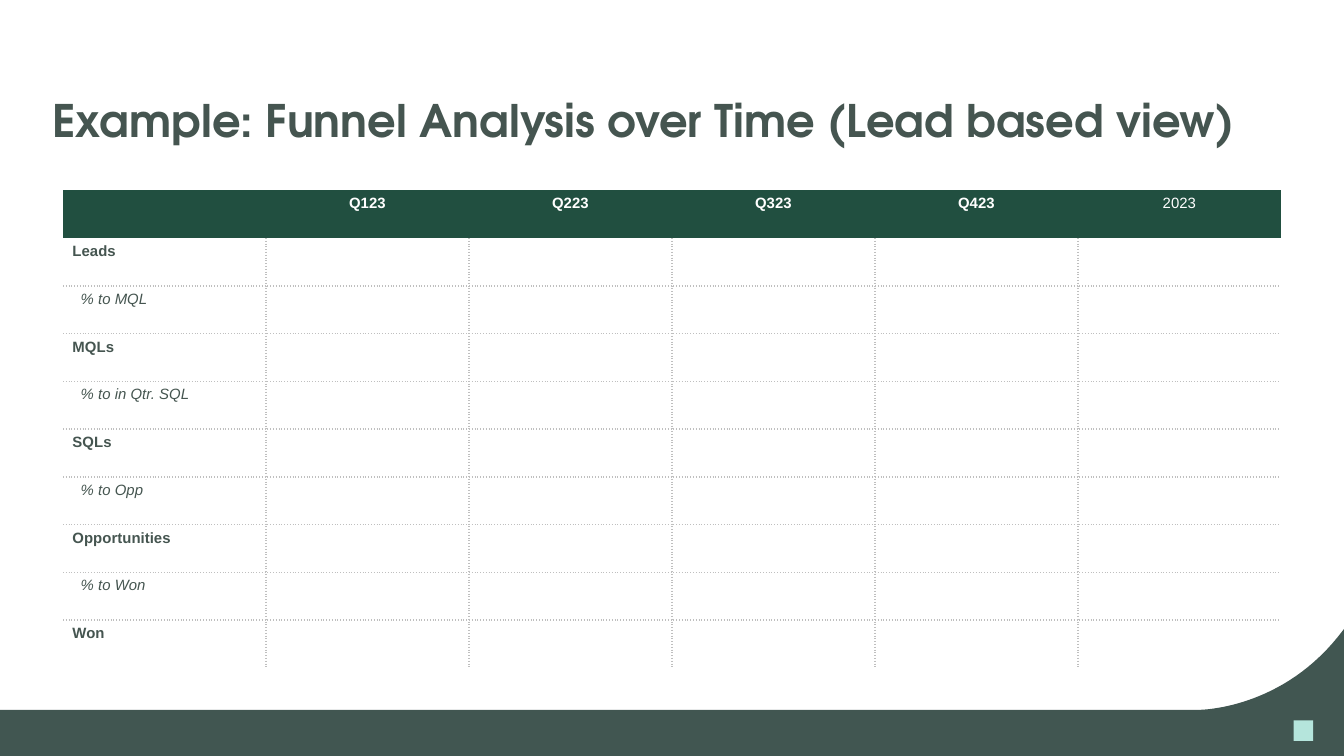
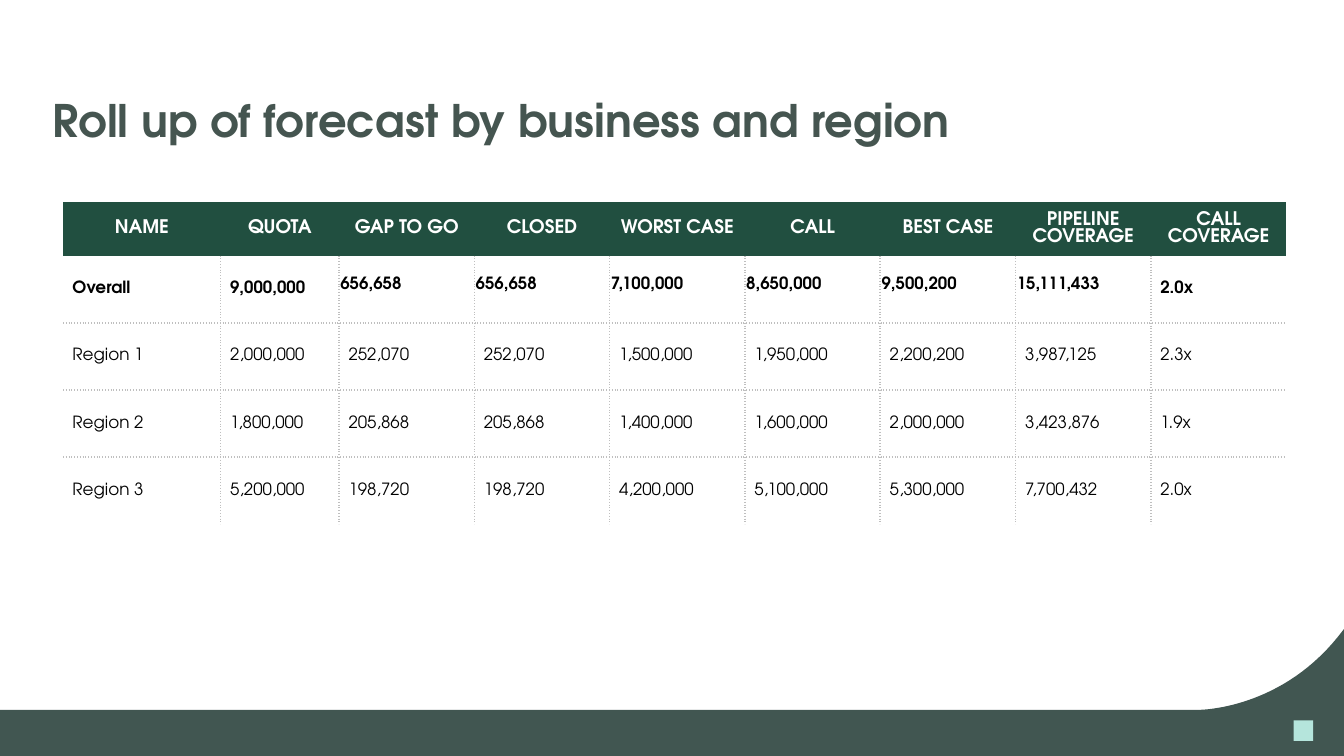
from dataclasses import dataclass

from lxml.etree import SubElement
from pptx import Presentation
from pptx.dml.color import RGBColor
from pptx.enum.shapes import MSO_SHAPE
from pptx.enum.text import MSO_ANCHOR, PP_ALIGN
from pptx.oxml.ns import qn
from pptx.util import Pt

COLORS = {
    "title": "455550",
    "band": "415651",
    "mark": "B5E5DC",
    "header": "214F40",
    "white": "FFFFFF",
    "black": "000000",
    "border": "BFBFBF",
}
SANS = "Arial"
DISPLAY = "TeX Gyre Adventor"
PLAIN_TABLE = "{2D5ABB26-0587-4C30-8999-92F81FD0307C}"
TABLE_LEFT = 33.75
TIGHT_INSETS = (0.7, 0.7, 0.7, 5.1)


@dataclass(frozen=True)
class CellStyle:
    font: str
    size: float
    color: str
    insets: tuple[float, float, float, float]
    fill: str | None = None
    bold: bool = False
    italic: bool = False
    align: PP_ALIGN = PP_ALIGN.LEFT
    anchor: MSO_ANCHOR = MSO_ANCHOR.TOP
    indent: float = 0
    line_spacing: float | None = None


@dataclass(frozen=True)
class Cell:
    text: str
    style: CellStyle


@dataclass(frozen=True)
class Grid:
    top: float
    widths: list[float]
    heights: list[float]
    rows: list[list[Cell]]


def rgb(name: str) -> RGBColor:
    return RGBColor.from_string(COLORS[name])


def write_text(frame, text: str, *, font: str, size: float, color: str, bold: bool = False,
               italic: bool = False, align: PP_ALIGN = PP_ALIGN.LEFT, indent: float = 0,
               line_spacing=None) -> None:
    para = frame.paragraphs[0]
    para.alignment = align
    if line_spacing:
        para.line_spacing = line_spacing
    if indent:
        para._p.get_or_add_pPr().set("marL", str(Pt(indent)))
    if not text:
        SubElement(para._p, qn("a:endParaRPr"), sz=str(int(size * 100)))
        return
    span = para.add_run()
    span.text = text
    span.font.name = font
    span.font.size = Pt(size)
    span.font.bold = bold
    span.font.italic = italic
    span.font.color.rgb = rgb(color)


def paint(shape, color: str) -> None:
    shape.shadow.inherit = False
    shape.fill.solid()
    shape.fill.fore_color.rgb = rgb(color)
    shape.line.fill.background()


def curve_points(start, first, second, end, steps: int = 32) -> list[tuple[int, int]]:
    points = []
    for step in range(1, steps + 1):
        t = step / steps
        weights = ((1 - t) ** 3, 3 * t * (1 - t) ** 2, 3 * t ** 2 * (1 - t), t ** 3)
        x, y = (sum(w * point[axis] for w, point in zip(weights, (start, first, second, end)))
                for axis in (0, 1))
        points.append((Pt(x), Pt(y)))
    return points


def add_footer(page) -> None:
    bend = (641.5, 380.3)
    builder = page.shapes.build_freeform(Pt(720), Pt(405))
    corners = [(0, 405), (0, 380.3), bend]
    builder.add_line_segments([(Pt(x), Pt(y)) for x, y in corners], close=False)
    builder.add_line_segments(curve_points(bend, bend, (687.6, 381), (720, 337)))
    paint(builder.convert_to_shape(), "band")
    mark = page.shapes.add_shape(MSO_SHAPE.RECTANGLE, Pt(693), Pt(386), Pt(10.5), Pt(11))
    paint(mark, "mark")


def add_title(page, text: str) -> None:
    box = page.shapes.add_textbox(Pt(24.5), Pt(35.3), Pt(671), Pt(45.4))
    frame = box.text_frame
    frame.word_wrap = True
    frame.vertical_anchor = MSO_ANCHOR.BOTTOM
    frame.margin_left = frame.margin_right = Pt(3.6)
    frame.margin_top = frame.margin_bottom = Pt(1.8)
    write_text(frame, text, font=DISPLAY, size=24, color="title", bold=True, line_spacing=0.9)


def add_borders(cell, edges: dict[str, bool]) -> None:
    properties = cell._tc.get_or_add_tcPr()
    for edge, shown in edges.items():
        if shown:
            line = SubElement(properties, qn(f"a:{edge}"), w=str(Pt(1)))
            fill = SubElement(line, qn("a:solidFill"))
            SubElement(fill, qn("a:srgbClr"), val=COLORS["border"])
            SubElement(line, qn("a:prstDash"), val="dot")


def fill_cell(cell, content: Cell) -> None:
    style = content.style
    cell.margin_left, cell.margin_top, cell.margin_right, cell.margin_bottom = map(Pt, style.insets)
    cell.vertical_anchor = style.anchor
    if style.fill:
        cell.fill.solid()
        cell.fill.fore_color.rgb = rgb(style.fill)
    else:
        cell.fill.background()
    write_text(cell.text_frame, content.text, font=style.font, size=style.size, color=style.color,
               bold=style.bold, italic=style.italic, align=style.align, indent=style.indent,
               line_spacing=Pt(style.line_spacing) if style.line_spacing else None)


def add_grid(page, grid: Grid) -> None:
    last_row, last_column = len(grid.heights) - 1, len(grid.widths) - 1
    holder = page.shapes.add_table(last_row + 1, last_column + 1, Pt(TABLE_LEFT), Pt(grid.top),
                                   Pt(sum(grid.widths)), Pt(sum(grid.heights)))
    table = holder.table
    table.first_row = table.horz_banding = False
    table._tbl.tblPr.find(qn("a:tableStyleId")).text = PLAIN_TABLE
    for column, width in zip(table.columns, grid.widths):
        column.width = Pt(width)
    for row, height in zip(table.rows, grid.heights):
        row.height = Pt(height)
    for r, contents in enumerate(grid.rows):
        for c, content in enumerate(contents):
            cell = table.cell(r, c)
            if r > 0:
                add_borders(cell, {"lnL": c > 0, "lnR": c < last_column,
                                   "lnT": r > 1, "lnB": r < last_row})
            fill_cell(cell, content)


def funnel_grid() -> Grid:
    insets = (5.1, 2.6, 5.1, 2.6)
    quarter = CellStyle(SANS, 8, "white", insets, "header", bold=True, align=PP_ALIGN.CENTER)
    year = CellStyle(SANS, 8, "white", insets, "header", align=PP_ALIGN.CENTER)
    stage = CellStyle(SANS, 8, "title", insets, "white", bold=True)
    rate = CellStyle(SANS, 8, "title", insets, "white", italic=True, indent=4.4)
    headings = ["", "Q123", "Q223", "Q323", "Q423"]
    labels = ["Leads", "% to MQL", "MQLs", "% to in Qtr. SQL", "SQLs", "% to Opp",
              "Opportunities", "% to Won", "Won"]
    rows = [[Cell(text, quarter) for text in headings] + [Cell("2023", year)]]
    for label in labels:
        style = rate if label.startswith("%") else stage
        rows.append([Cell(label, style)] + [Cell("", stage)] * 5)
    return Grid(101.9, [108.75] * 6, [25.6] * 10, rows)


def forecast_grid() -> Grid:
    insets = (5.1, 5.1, 5.1, 5.1)
    middle = MSO_ANCHOR.MIDDLE
    heading = CellStyle(DISPLAY, 10, "white", insets, "header", bold=True,
                        align=PP_ALIGN.CENTER, anchor=middle, line_spacing=9.2)
    total = CellStyle(DISPLAY, 9, "black", insets, bold=True, anchor=middle)
    tight_total = CellStyle(DISPLAY, 9, "black", TIGHT_INSETS, bold=True, anchor=middle)
    region = CellStyle(DISPLAY, 9, "black", insets, anchor=middle)
    headings = ["NAME", "QUOTA", "GAP TO GO", "CLOSED", "WORST CASE", "CALL", "BEST CASE",
                "PIPELINE COVERAGE", "CALL COVERAGE"]
    totals = ["Overall", "9,000,000", "656,658", "656,658", "7,100,000", "8,650,000",
              "9,500,200", "15,111,433", "2.0x"]
    regions = [
        ["Region 1", "2,000,000", "252,070", "252,070", "1,500,000", "1,950,000",
         "2,200,200", "3,987,125", "2.3x"],
        ["Region 2", "1,800,000", "205,868", "205,868", "1,400,000", "1,600,000",
         "2,000,000", "3,423,876", "1.9x"],
        ["Region 3", "5,200,000", "198,720", "198,720", "4,200,000", "5,100,000",
         "5,300,000", "7,700,432", "2.0x"],
    ]
    rows = [
        [Cell(text, heading) for text in headings],
        [Cell(text, tight_total if 2 <= c <= 7 else total) for c, text in enumerate(totals)],
        *[[Cell(text, region) for text in values] for values in regions],
    ]
    return Grid(108.2, [84.4, 63.5] + [72.5] * 7, [28.7] + [36] * 4, rows)


def main() -> None:
    deck = Presentation()
    deck.slide_width, deck.slide_height = Pt(720), Pt(405)
    pages = [
        ("Example: Funnel Analysis over Time (Lead based view)", funnel_grid()),
        ("Roll up of forecast by business and region", forecast_grid()),
    ]
    for title, grid in pages:
        page = deck.slides.add_slide(deck.slide_layouts[6])
        add_footer(page)
        add_title(page, title)
        add_grid(page, grid)
    deck.save("out.pptx")


if __name__ == "__main__":
    main()
